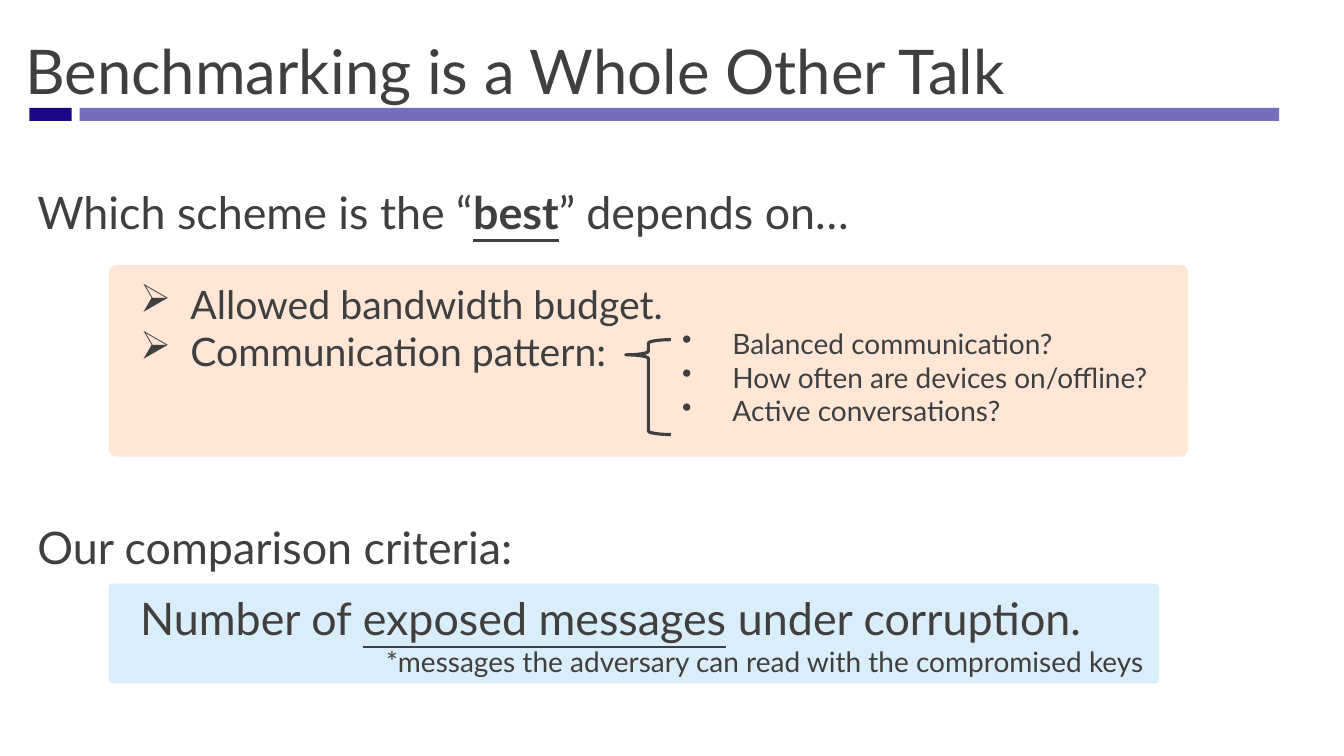
from dataclasses import dataclass

from lxml import etree
from pptx import Presentation
from pptx.dml.color import RGBColor
from pptx.enum.shapes import MSO_SHAPE
from pptx.enum.text import MSO_ANCHOR
from pptx.oxml.ns import qn
from pptx.util import Cm, Pt

RECT = MSO_SHAPE.RECTANGLE
ROUND = MSO_SHAPE.ROUNDED_RECTANGLE
BRACE = MSO_SHAPE.LEFT_BRACE
TOP, MIDDLE = MSO_ANCHOR.TOP, MSO_ANCHOR.MIDDLE


@dataclass(frozen=True)
class Theme:
    font: str = "Lato"
    ink: str = "3F3F3F"
    navy: str = "1C0885"
    violet: str = "665EB8"
    peach: str = "FFE6D5"
    sky: str = "DAEDFB"
    title: int = 44
    lead: int = 32
    item: int = 28
    note: int = 20


class Page:
    def __init__(self, slide, theme):
        self.slide = slide
        self.theme = theme

    def shape(self, kind, box, adjust=()):
        shape = self.slide.shapes.add_shape(kind, *map(Cm, box))
        shape.shadow.inherit = False
        for i, value in enumerate(adjust):
            shape.adjustments[i] = value
        return shape

    def block(self, kind, box, color, adjust=(), alpha=None):
        shape = self.shape(kind, box, adjust)
        shape.line.fill.background()
        shape.fill.solid()
        shape.fill.fore_color.rgb = RGBColor.from_string(color)
        if alpha:
            tint = shape.fill._xPr.find(".//" + qn("a:srgbClr"))
            etree.SubElement(tint, qn("a:alpha"), val=str(alpha * 1000))

    def brace(self, box, adjust):
        shape = self.shape(BRACE, box, adjust)
        shape.fill.background()
        shape.line.color.rgb = RGBColor.from_string(self.theme.ink)
        shape.line.width = Pt(2.25)

    def frame(self, box, anchor=TOP, inset=True):
        frame = self.slide.shapes.add_textbox(*map(Cm, box)).text_frame
        frame.word_wrap = True
        frame.vertical_anchor = anchor
        if not inset:
            frame.margin_left = frame.margin_right = 0
            frame.margin_top = frame.margin_bottom = 0
        return frame

    def fill(self, para, size, *parts, indent=0):
        """Write the parts; each is plain text or a (text, bold) underlined pair."""
        if indent:
            para._p.get_or_add_pPr().set("marL", str(Cm(indent)))
        font = para.font
        font.name, font.size = self.theme.font, Pt(size)
        font.color.rgb = RGBColor.from_string(self.theme.ink)
        for part in parts:
            run = para.add_run()
            if isinstance(part, str):
                run.text = part
            else:
                run.text, bold = part
                run.font.underline = True
                if bold:
                    run.font.bold = True

    def text(self, box, size, *parts, **style):
        frame = self.frame(box, **style)
        self.fill(frame.paragraphs[0], size, *parts)
        return frame

    def bullets(self, box, size, mark, items):
        frame = self.frame(box)
        for i, item in enumerate(items):
            para = frame.add_paragraph() if i else frame.paragraphs[0]
            props = para._p.get_or_add_pPr()
            props.set("indent", str(-Cm(1.27)))
            etree.SubElement(props, qn("a:buChar"), char=mark)
            self.fill(para, size, item, indent=1.27)


def main():
    deck = Presentation()
    deck.slide_width, deck.slide_height = Cm(33.87), Cm(19.05)
    look = Theme()
    page = Page(deck.slides.add_slide(deck.slide_layouts[6]), look)

    # Title and rule
    page.block(RECT, (0.74, 2.72, 1.07, 0.33), look.navy)
    page.block(RECT, (2.01, 2.72, 30.23, 0.33), look.violet, alpha=90)
    page.text((0.64, 0.86, 31.9, 1.8), look.title,
              "Benchmarking is a Whole Other Talk", anchor=MIDDLE, inset=False)

    # What the best scheme depends on
    page.block(ROUND, (2.74, 6.68, 27.2, 4.83), look.peach, [0.04])
    page.text((0.69, 4.52, 23.85, 1.63), look.lead,
              "Which scheme is the “", ("best", True), "” depends on…")
    page.bullets((3.28, 6.93, 23.85, 2.64), look.item, "➢",
                 ["Allowed bandwidth budget.", "Communication pattern:"])
    page.bullets((16.94, 8.1, 15.09, 2.82), look.note, "•",
                 ["Balanced communication?",
                  "How often are devices on/offline?",
                  "Active conversations?"])
    page.brace((15.77, 8.56, 1.14, 2.39), [0.08, 0.16])

    # Comparison criteria
    page.block(ROUND, (2.74, 14.71, 26.47, 2.51), look.sky, [0.04])
    page.text((0.69, 12.98, 13.06, 1.63), look.lead, "Our comparison criteria:")
    frame = page.text((3.28, 14.76, 26.47, 2.49), look.lead,
                      "Number of ", ("exposed messages", False),
                      " under corruption.")
    page.fill(frame.add_paragraph(), look.note,
              "*messages the adversary can read with the compromised keys",
              indent=6.2)

    deck.save("out.pptx")


if __name__ == "__main__":
    main()
